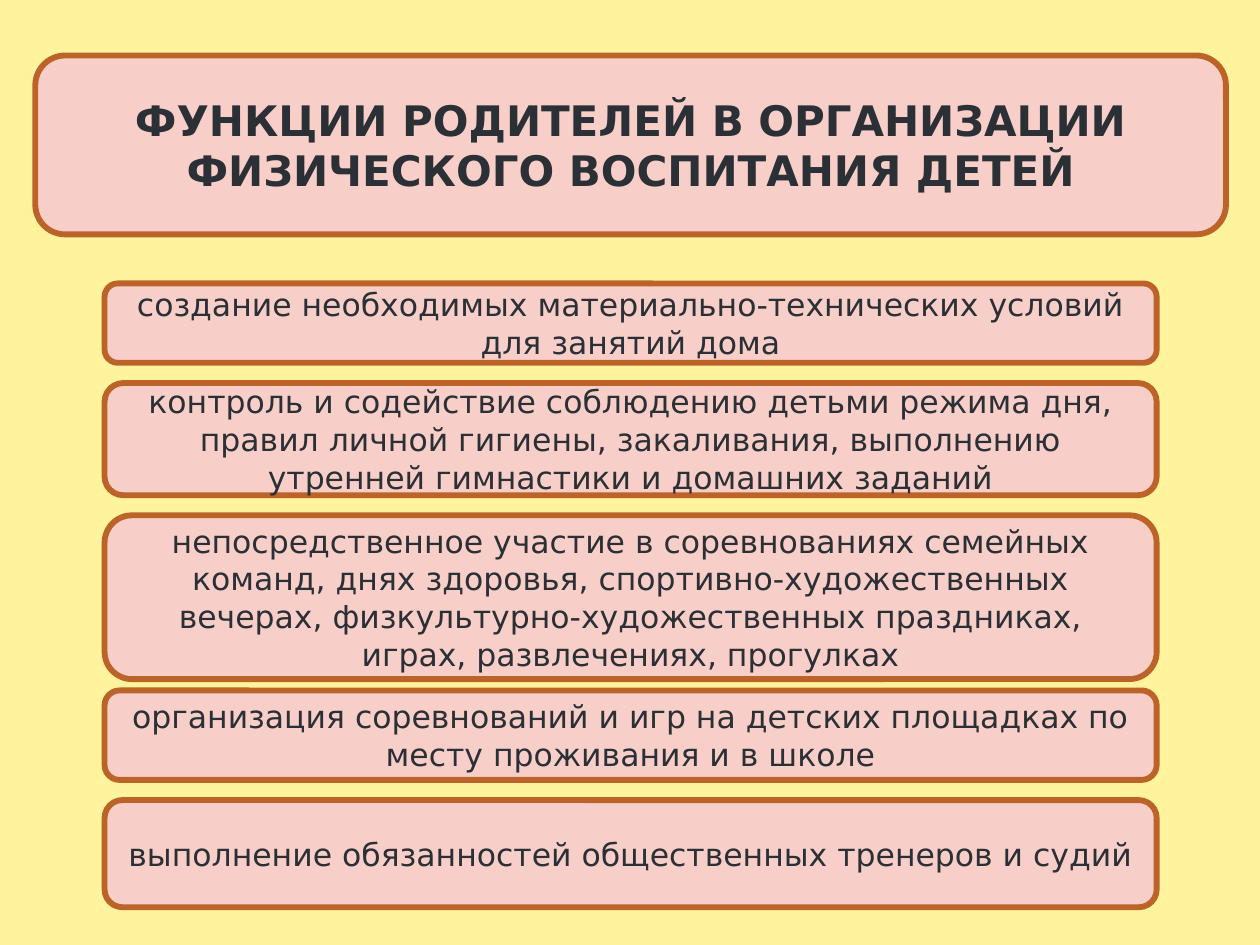
from dataclasses import dataclass

import pptx
import pptx.dml.color
import pptx.enum.shapes
import pptx.enum.text
import pptx.util

Inches = pptx.util.Inches

COLOURS = {"page": "FFF39D", "panel": "F8CFC8", "border": "BC6329", "text": "2B2F36"}
FONT = "DejaVu Sans"
PANEL_LEFT, PANEL_WIDTH = 0.83, 8.35


@dataclass(frozen=True)
class Panel:
    top: float
    height: float
    text: str
    left: float = PANEL_LEFT
    width: float = PANEL_WIDTH
    size: int = 18
    bold: bool = False


TITLE = Panel(
    0.44, 1.42, "ФУНКЦИИ РОДИТЕЛЕЙ В ОРГАНИЗАЦИИ ФИЗИЧЕСКОГО ВОСПИТАНИЯ ДЕТЕЙ",
    left=0.28, width=9.45, size=24, bold=True,
)
FUNCTIONS = [
    Panel(2.25, 0.63, "создание необходимых материально-технических условий для занятий дома"),
    Panel(3.04, 0.89, "контроль и содействие соблюдению детьми режима дня, правил личной гигиены, "
                      "закаливания, выполнению утренней гимнастики и домашних заданий"),
    Panel(4.09, 1.3, "непосредственное участие в соревнованиях семейных команд, днях здоровья, "
                     "спортивно-художественных вечерах, физкультурно-художественных праздниках, "
                     "играх, развлечениях, прогулках"),
    Panel(5.48, 0.71, "организация соревнований и игр на детских площадках "
                      "по месту проживания и в школе"),
    Panel(6.35, 0.85, "выполнение обязанностей общественных тренеров и судий"),
]


def colour(name: str) -> pptx.dml.color.RGBColor:
    return pptx.dml.color.RGBColor.from_string(COLOURS[name])


def draw_panel(page: pptx.slide.Slide, panel: Panel) -> None:
    box = page.shapes.add_shape(
        pptx.enum.shapes.MSO_SHAPE.ROUNDED_RECTANGLE,
        Inches(panel.left), Inches(panel.top), Inches(panel.width), Inches(panel.height),
    )
    box.shadow.inherit = False
    box.fill.solid()
    box.fill.fore_color.rgb = colour("panel")
    box.line.color.rgb = colour("border")
    box.line.width = pptx.util.Pt(3.35)

    frame = box.text_frame
    frame.word_wrap = True
    frame.vertical_anchor = pptx.enum.text.MSO_ANCHOR.MIDDLE
    para = frame.paragraphs[0]
    para.alignment = pptx.enum.text.PP_ALIGN.CENTER
    span = para.add_run()
    span.text = panel.text
    span.font.name = FONT
    span.font.size = pptx.util.Pt(panel.size)
    span.font.bold = panel.bold
    span.font.color.rgb = colour("text")


def main() -> None:
    """Build the slide on the functions of parents in physical education."""
    deck = pptx.Presentation()
    deck.slide_width, deck.slide_height = Inches(10), Inches(7.5)
    page = deck.slides.add_slide(deck.slide_layouts[6])
    page.background.fill.solid()
    page.background.fill.fore_color.rgb = colour("page")
    for panel in [TITLE, *FUNCTIONS]:
        draw_panel(page, panel)
    deck.save("out.pptx")


if __name__ == "__main__":
    main()
